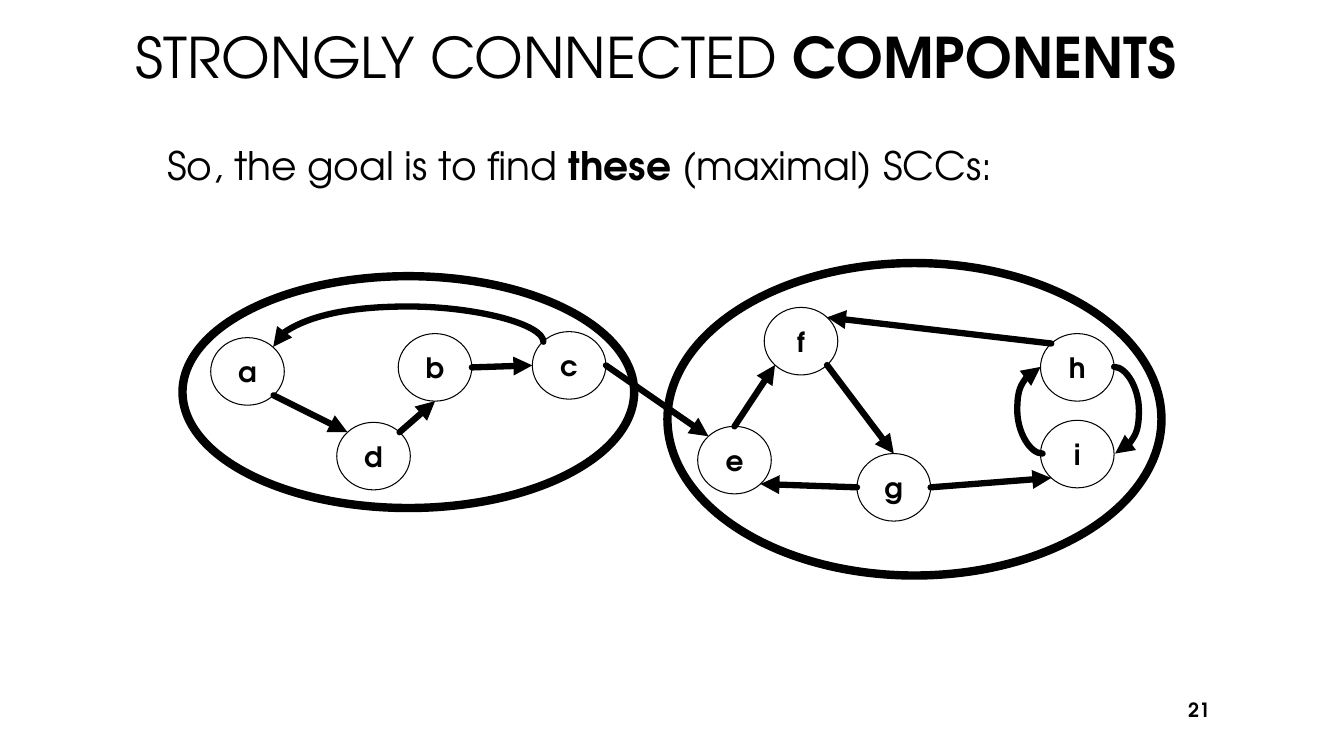
"""Build the slide on strongly connected components."""
from math import sqrt

from lxml import etree
from pptx import Presentation
from pptx import util as u
from pptx.dml.color import RGBColor
from pptx.enum import shapes, text
from pptx.oxml.ns import qn


class Sketch:
    """Hold the style and the current slide, on a grid of one-inch columns and rows."""

    colours = {"ink": "000000", "paper": "FFFFFF"}
    font = "TeX Gyre Adventor"
    cell = u.Inches(1)
    node_size = (0.73, 0.67)
    diagonal = sqrt(0.5)

    def __init__(self, deck):
        """Add a blank slide to the deck."""
        self.page = deck.slides.add_slide(deck.slide_layouts[6])
        self.nodes = {}

    def grid(self, *cells):
        """Turn grid units into lengths."""
        return [round(self.cell * count) for count in cells]

    def colour(self, name):
        """Look up a colour by name."""
        return RGBColor.from_string(self.colours[name])

    def letter(self, shape, runs, size, align, anchor):
        """Fill a shape with one paragraph of (words, bold) runs."""
        frame = shape.text_frame
        frame.word_wrap = True
        frame.vertical_anchor = anchor
        para = frame.paragraphs[0]
        para.alignment = align
        for words, bold in runs:
            span = para.add_run()
            span.text = words
            span.font.name = self.font
            span.font.size = u.Pt(size)
            span.font.bold = bold
            span.font.color.rgb = self.colour("ink")
        return frame

    def label(self, place, runs, size, align=text.PP_ALIGN.LEFT,
              anchor=text.MSO_ANCHOR.MIDDLE, indent=0):
        """Add a text box."""
        box = self.page.shapes.add_textbox(*self.grid(*place))
        frame = self.letter(box, runs, size, align, anchor)
        frame.margin_left = self.grid(0.1 + indent)[0]

    def oval(self, place, width, fill=None):
        """Add an outlined ellipse."""
        shape = self.page.shapes.add_shape(shapes.MSO_SHAPE.OVAL, *self.grid(*place))
        shape.shadow.inherit = False
        if fill:
            shape.fill.solid()
            shape.fill.fore_color.rgb = self.colour(fill)
        else:
            shape.fill.background()
        shape.line.color.rgb = self.colour("ink")
        shape.line.width = u.Pt(width)
        return shape

    def node(self, name, left, top):
        """Add a named vertex."""
        self.nodes[name] = (left, top)
        shape = self.oval((left, top, *self.node_size), 0.75, "paper")
        frame = self.letter(shape, [(name, True)], 20, text.PP_ALIGN.CENTER,
                            text.MSO_ANCHOR.MIDDLE)
        frame.margin_left = frame.margin_right = 0
        frame.margin_top = frame.margin_bottom = 0

    def rim(self, name, side):
        """Find the point of a vertex's rim that faces a compass side."""
        reach = 0.5 * (self.diagonal if len(side) == 2 else 1)
        across = ("E" in side) - ("W" in side)
        down = ("S" in side) - ("N" in side)
        (left, top), (width, height) = self.nodes[name], self.node_size
        return (left + width * (0.5 + across * reach),
                top + height * (0.5 + down * reach))

    def arrow(self, kind, start, end):
        """Add a connector with an arrowhead at its end."""
        line = self.page.shapes.add_connector(kind, *self.grid(*start, *end))
        line.line.color.rgb = self.colour("ink")
        line.line.width = u.Pt(4.5)
        properties = line._element.spPr
        stroke = properties.find(qn("a:ln"))
        stroke.set("cap", "rnd")
        etree.SubElement(stroke, qn("a:tailEnd"), type="triangle")
        etree.SubElement(properties, qn("a:effectLst"))
        return line

    def edge(self, source, leaving, target, entering):
        """Add a straight edge between two vertices."""
        self.arrow(shapes.MSO_CONNECTOR.STRAIGHT,
                   self.rim(source, leaving), self.rim(target, entering))

    def bend(self, start, end, bulge, turn=0, flip=False):
        """Add a curved edge that bulges out by a given distance."""
        width, height = (abs(b - a) for a, b in zip(start, end))
        if turn % 180:
            width, height = height, width
        left = (start[0] + end[0] - width) / 2
        top = (start[1] + end[1] - height) / 2
        line = self.arrow(shapes.MSO_CONNECTOR.CURVE, (left, top),
                          (left + width, top + height))
        properties = line._element.spPr
        frame = properties.find(qn("a:xfrm"))
        frame.set("rot", str(turn * 60000))
        if flip:
            frame.set("flipH", "1")
            frame.set("flipV", "1")
        guides = properties.find(qn("a:prstGeom")).get_or_add_avLst()
        etree.SubElement(guides, qn("a:gd"), name="adj1",
                         fmla=f"val {round(bulge / width * 100000)}")


def main():
    """Draw the slide and save it."""
    deck = Presentation()
    deck.slide_width, deck.slide_height = u.Inches(13.33), u.Inches(7.5)
    sketch = Sketch(deck)

    sketch.label((1.25, 0, 10.83, 1.12),
                 [("STRONGLY CONNECTED ", False), ("COMPONENTS", True)], 40)
    sketch.label((1.25, 1.35, 10.83, 5.03),
                 [("So, the goal is to find ", False), ("these ", True),
                  ("(maximal) SCCs:", False)],
                 28, anchor=text.MSO_ANCHOR.TOP, indent=0.31)

    for component in ((1.81, 2.74, 4.48, 2.3), (6.62, 2.61, 4.9, 3.1)):
        sketch.oval(component, 6)

    for name, left, top in (
            ("a", 2.09, 3.35), ("b", 3.95, 3.31), ("c", 5.28, 3.29),
            ("d", 3.34, 4.19), ("e", 6.92, 4.23), ("f", 7.58, 3.05),
            ("g", 8.5, 4.5), ("h", 10.32, 3.31), ("i", 10.32, 4.17)):
        sketch.node(name, left, top)

    for route in (
            "a SE d NW", "d NE b S", "b E c W", "c E e NW", "e N f SW",
            "f SE g N", "g W e SE", "g E i SW", "h NW f NE"):
        sketch.edge(*route.split())

    sketch.bend((5.39, 3.39), (2.71, 3.44), -0.35, turn=270, flip=True)
    sketch.bend((11.05, 3.64), (11.06, 4.5), 0.25)
    sketch.bend((10.34, 4.5), (10.32, 3.64), 0.25, turn=180)

    sketch.label((11.5, 6.84, 0.6, 0.4), [("21", True)], 14, text.PP_ALIGN.RIGHT)
    deck.save("out.pptx")


if __name__ == "__main__":
    main()
